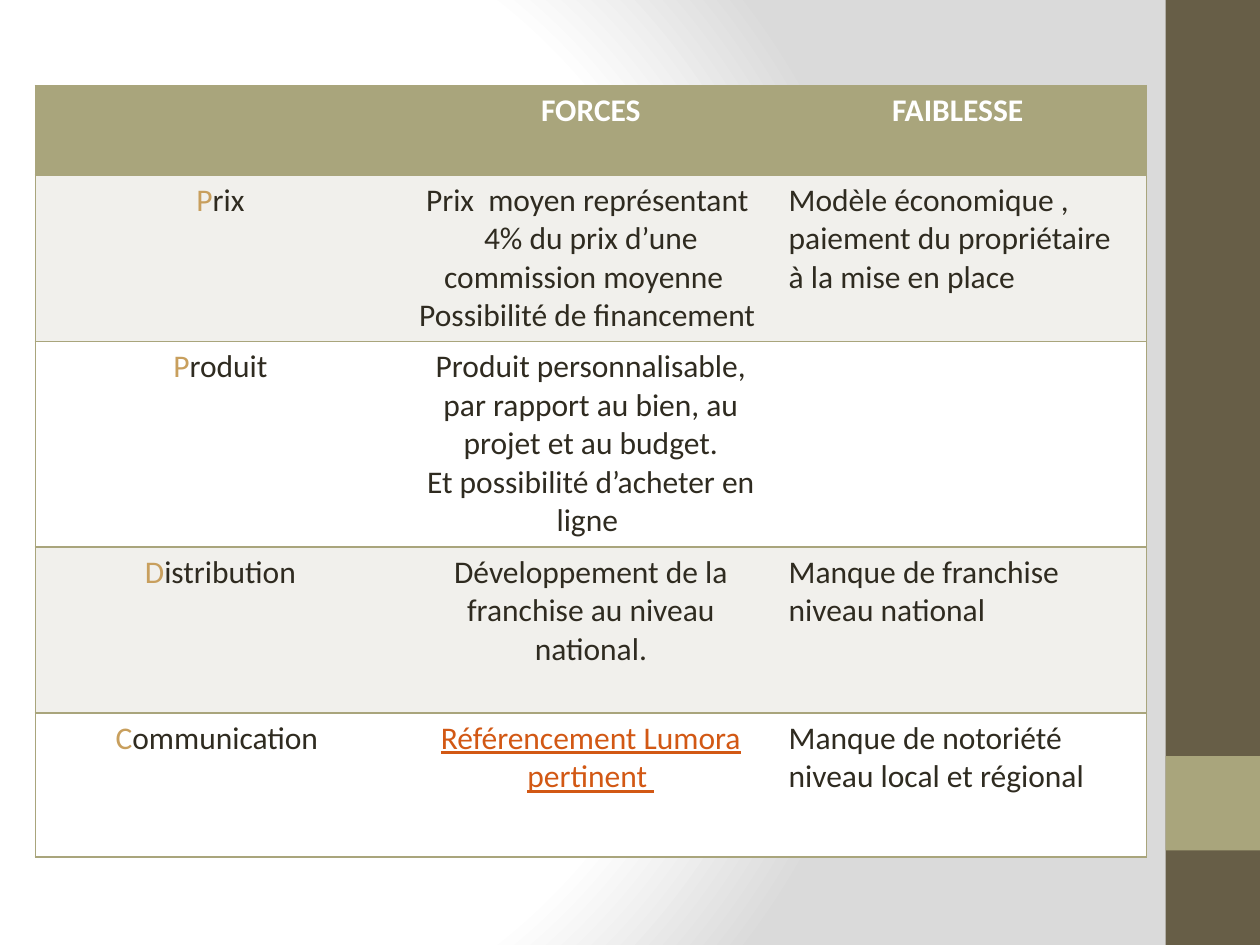
from pptx import Presentation
from pptx.dml.color import RGBColor
from pptx.enum.shapes import MSO_SHAPE
from pptx.enum.text import PP_ALIGN
from pptx.oxml import parse_xml
from pptx.oxml.ns import nsdecls
from pptx.util import Inches, Pt

OLIVE = RGBColor(0xA9, 0xA5, 0x7C)
BROWN = RGBColor(0x67, 0x5E, 0x47)
PALE = RGBColor(0xF1, 0xF0, 0xEC)
WHITE = RGBColor(0xFF, 0xFF, 0xFF)
GREY = RGBColor(0xDA, 0xDA, 0xDA)
DARK = RGBColor(0x2F, 0x2B, 0x20)
GOLD = RGBColor(0xC8, 0x9F, 0x5D)
RUST = RGBColor(0xD2, 0x58, 0x14)

BASE = {"name": "Calibri", "size": Pt(18), "bold": False}
HEAD = {"bold": True}
LINK = {"underline": True}
NO_STYLE = "{2D5ABB26-0587-4C30-8999-92F81FD0307C}"


def add_run(para, text, color, extra):
    font = para.add_run().font
    para.runs[-1].text = text
    for key, value in {**BASE, **extra}.items():
        setattr(font, key, value)
    font.color.rgb = color


def add_edges(cell, sides):
    props = cell._tc.get_or_add_tcPr()
    for spot, side in enumerate(sides):
        props.insert(spot, parse_xml(
            f'<a:ln{side} {nsdecls("a")} w="12700"><a:solidFill>'
            f'<a:srgbClr val="{OLIVE}"/></a:solidFill></a:ln{side}>'))


deck = Presentation()
deck.slide_width, deck.slide_height = Inches(10), Inches(7.5)
slide = deck.slides.add_slide(deck.slide_layouts[6])

stops = "".join(
    f'<a:gs pos="{pos * 1000}"><a:srgbClr val="{color}"/></a:gs>'
    for pos, color in [(0, WHITE), (75, WHITE), (100, GREY)])
slide._element.cSld.insert(0, parse_xml(
    f'<p:bg {nsdecls("p", "a")}><p:bgPr><a:gradFill rotWithShape="1">'
    f'<a:gsLst>{stops}</a:gsLst><a:path path="circle">'
    '<a:fillToRect l="20000" t="50000" r="100000" b="50000"/></a:path>'
    '</a:gradFill><a:effectLst/></p:bgPr></p:bg>'))

for top, height, color in [(0, 7.5, BROWN), (6, 0.75, OLIVE)]:
    bar = slide.shapes.add_shape(
        MSO_SHAPE.RECTANGLE, Inches(9.25), Inches(top), Inches(0.75), Inches(height))
    bar.shadow.inherit = False
    bar.fill.solid()
    bar.fill.fore_color.rgb = color
    bar.line.fill.background()

rows = [
    ("", ["FORCES"], "FAIBLESSE "),
    ("Prix",
     ["Prix  moyen représentant  4% du prix d’une commission moyenne  ",
      "Possibilité de financement "],
     "Modèle économique , paiement du propriétaire  à la mise en place"),
    ("Produit",
     ["Produit personnalisable, par rapport au bien, au projet et au budget.",
      "Et possibilité d’acheter en ligne "],
     ""),
    ("Distribution",
     ["Développement de la franchise au niveau national."],
     "Manque de franchise niveau national"),
    ("Communication ",
     ["Référencement Lumora pertinent "],
     "Manque de notoriété niveau local et régional"),
]
tall = [0.71, 1.32, 1.63, 1.32, 1.14]

table = slide.shapes.add_table(
    len(rows), 3, Inches(0.28), Inches(0.68), Inches(8.82), Inches(sum(tall))).table
table.first_row = table.horz_banding = False
table._tbl.tblPr.find("{*}tableStyleId").text = NO_STYLE
for col in table.columns:
    col.width = Inches(2.94)

for r, (label, pros, con) in enumerate(rows):
    table.rows[r].height = Inches(tall[r])
    fill = OLIVE if r == 0 else PALE if r % 2 else WHITE
    for c, lines in enumerate([[label], pros, [con]]):
        cell = table.cell(r, c)
        cell.fill.solid()
        cell.fill.fore_color.rgb = fill
        add_edges(cell, ["LTB", "TB", "RTB"][c])
        for n, line in enumerate(lines):
            frame = cell.text_frame
            para = frame.add_paragraph() if n else frame.paragraphs[0]
            if r == 0 or c < 2:
                para.alignment = PP_ALIGN.CENTER
            if not line:
                continue
            if r == 0:
                add_run(para, line, WHITE, HEAD)
            elif c == 0:
                add_run(para, line[0], GOLD, {})
                add_run(para, line[1:], DARK, {})
            elif c == 1 and r == 4:
                add_run(para, line, RUST, LINK)
            else:
                add_run(para, line, DARK, {})

deck.save("out.pptx")
